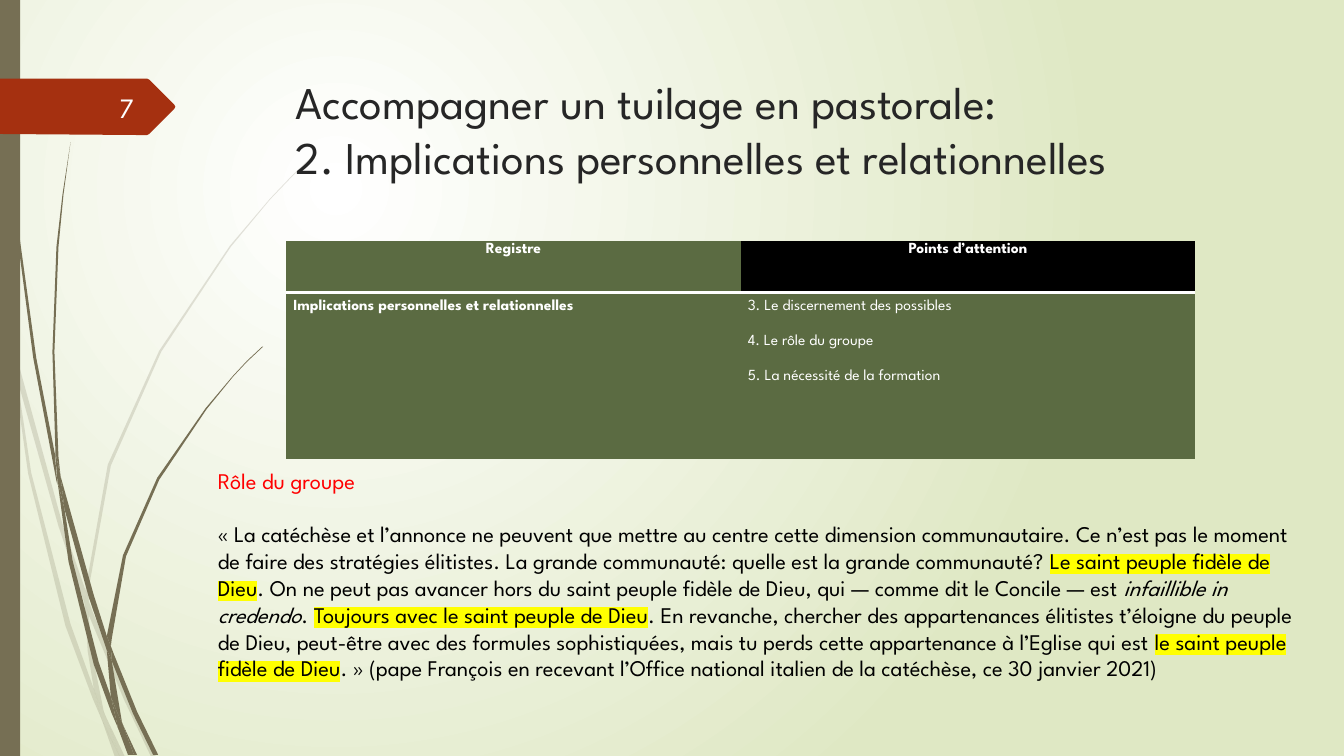
from pptx import Presentation
from pptx.dml.color import RGBColor
from pptx.enum.shapes import MSO_SHAPE
from pptx.enum.text import MSO_ANCHOR, PP_ALIGN
from pptx.oxml import parse_xml
from pptx.oxml.ns import nsdecls
from pptx.util import Pt

FONT = "League Spartan"
GRASS, RED, GREEN = "766F54", "A53010", "5B6B42"
BLACK, WHITE, YELLOW = "000000", "FFFFFF", "FFFF00"
NO_STYLE = "{2D5ABB26-0587-4C30-8999-92F81FD0307C}"

# Outlines are drawn on a fine grid; UNIT is its step in points
UNIT = 0.72
PALE = [
    [(11, 350), (9, 322), (0, 282), (0, 299), (10, 344)],
    [(58, 522), (84, 599), (85, 586), (62, 520), (14, 345), (17, 376)],
    [(92, 607), (88, 596), (88, 610), (123, 694), (150, 751), (155, 751),
     (127, 692)],
    [(119, 751), (124, 751), (105, 711)],
    [(93, 683), (70, 619), (31, 469), (17, 376), (11, 350), (28, 470),
     (65, 621), (92, 693), (101, 714), (99, 707)],
    [(84, 599), (87, 646), (93, 683), (96, 692), (105, 711), (103, 706),
     (91, 646), (88, 610), (88, 608)],
    [(88, 584), (110, 462), (160, 349), (229, 245), (268, 198), (290, 175),
     (312, 154), (312, 153), (289, 175), (268, 197), (228, 244), (158, 348),
     (107, 461), (85, 584), (85, 586), (88, 596)],
    [(101, 714), (114, 751), (119, 751)],
    [(88, 608), (88, 610), (88, 596), (85, 586), (84, 599)],
    [(96, 692), (93, 683), (99, 707), (101, 714), (119, 751), (105, 711)],
]
DARK = [
    [(7, 110), (17, 233), (33, 355), (56, 477), (57, 481), (55, 457),
     (55, 453), (36, 355), (19, 232), (8, 109), (5, 48), (4, 0), (3, 0),
     (4, 48)],
    [(88, 592), (106, 645), (106, 633), (106, 631), (93, 590), (60, 472),
     (64, 505)],
    [(113, 649), (110, 641), (111, 656), (132, 708), (152, 749), (157, 749),
     (136, 706)],
    [(110, 691), (98, 657), (72, 556), (64, 505), (57, 477), (68, 557),
     (93, 659), (111, 708), (117, 722), (116, 717)],
    [(60, 472), (58, 453), (54, 349), (58, 245), (63, 193), (70, 141),
     (62, 193), (56, 245), (52, 349), (55, 449)],
    [(133, 749), (136, 749), (122, 719)],
    [(57, 477), (64, 505), (60, 472), (55, 449), (55, 453)],
    [(111, 633), (125, 552), (158, 476), (205, 406), (231, 374), (245, 359),
     (261, 344), (260, 344), (245, 358), (231, 373), (204, 405), (156, 474),
     (122, 551), (106, 631), (110, 641)],
    [(117, 722), (127, 749), (131, 749)],
    [(106, 645), (110, 691), (116, 706), (122, 719), (121, 716), (111, 656),
     (109, 651)],
    [(106, 645), (109, 651), (111, 656), (110, 641), (106, 631), (106, 633)],
    [(116, 706), (110, 691), (116, 717), (117, 722), (130, 749), (133, 749),
     (122, 719)],
]
TAG = [(173, 108), (148, 133), (146, 134), (136, 134), (0, 133), (0, 78),
       (136, 78), (146, 78), (148, 79), (173, 104), (174, 106)]

HEADS = ["Registre", "Points d’attention"]
THEME = "Implications personnelles et relationnelles"
POINTS = ["3. Le discernement des possibles", "4. Le rôle du groupe",
          "5. La nécessité de la formation"]
MARK = {"mark": YELLOW}
QUOTE = [
    ("« La catéchèse et l’annonce ne peuvent que mettre au centre cette "
     "dimension communautaire. Ce n’est pas le moment de faire des "
     "stratégies élitistes. La grande communauté: quelle est la grande "
     "communauté? ", {}),
    ("Le saint peuple fidèle de Dieu", MARK),
    (". On ne peut pas avancer hors du saint peuple fidèle de Dieu, qui — "
     "comme dit le Concile — est ", {}),
    ("infaillible in credendo", {"italic": True}),
    (". ", {}),
    ("Toujours avec le saint peuple de Dieu", MARK),
    (". En revanche, chercher des appartenances élitistes t’éloigne du "
     "peuple de Dieu, peut-être avec des formules sophistiquées, mais tu "
     "perds cette appartenance à l’Eglise qui est ", {}),
    ("le saint peuple fidèle de Dieu", MARK),
    (". » (pape François en recevant l’Office national italien de la "
     "catéchèse, ce 30 janvier 2021)", {}),
]


def paint(fill, color):
    fill.solid()
    fill.fore_color.rgb = RGBColor.from_string(color)


def solid(color, inner=""):
    return (f'<a:solidFill {nsdecls("a")}><a:srgbClr val="{color}">{inner}'
            '</a:srgbClr></a:solidFill>')


def write(para, text, size=16, color=BLACK, bold=False, italic=False,
          mark=None, align=None, space=None, after=None):
    """Add text to a paragraph; a newline becomes a line break."""
    for i, part in enumerate(text.split("\n")):
        if i:
            para.add_line_break()
        run = para.add_run()
        run.text = part
        font = run.font
        font.size, font.bold, font.italic = Pt(size), bold, italic
        font.name = FONT
        paint(font.fill, color)
        if mark:
            props = run._r.get_or_add_rPr()
            props.find("{*}solidFill").addnext(parse_xml(
                f'<a:highlight {nsdecls("a")}><a:srgbClr val="{mark}"/>'
                '</a:highlight>'))
    if align is not None:
        para.alignment = align
    if space is not None:
        para.line_spacing = space
    if after is not None:
        para.space_after = Pt(after)


class Page:
    def __init__(self, deck):
        self.slide = deck.slides.add_slide(deck.slide_layouts[6])
        self.shapes = self.slide.shapes

    def glow(self, inner, outer):
        """Set a round gradient as the background."""
        self.slide._element.cSld.insert(0, parse_xml(
            f'<p:bg {nsdecls("p", "a")}><p:bgPr><a:gradFill><a:gsLst>'
            f'<a:gs pos="0"><a:srgbClr val="{inner}"/></a:gs>'
            f'<a:gs pos="100000"><a:srgbClr val="{outer}"/></a:gs></a:gsLst>'
            '<a:path path="circle"><a:fillToRect l="50000" t="50000" '
            'r="100000" b="100000"/></a:path></a:gradFill><a:effectLst/>'
            '</p:bgPr></p:bg>'))

    def finish(self, shape, color, alpha=None):
        shape.shadow.inherit = False
        paint(shape.fill, color)
        shape.line.fill.background()
        if alpha:
            old = shape._element.spPr.find("{*}solidFill")
            old.getparent().replace(old, parse_xml(
                solid(color, f'<a:alpha val="{alpha * 1000}"/>')))

    def bar(self, x, y, w, h, color):
        shape = self.shapes.add_shape(
            MSO_SHAPE.RECTANGLE, Pt(x), Pt(y), Pt(w), Pt(h))
        self.finish(shape, color)

    def outline(self, points, color, alpha=None):
        spots = [(Pt(x * UNIT), Pt(y * UNIT)) for x, y in points]
        form = self.shapes.build_freeform(*spots[0])
        form.add_line_segments(spots[1:], close=True)
        self.finish(form.convert_to_shape(), color, alpha)

    def box(self, x, y, w, h, anchor=MSO_ANCHOR.TOP):
        frame = self.shapes.add_textbox(Pt(x), Pt(y), Pt(w), Pt(h)).text_frame
        frame.word_wrap = True
        frame.vertical_anchor = anchor
        return frame

    def grid(self, x, y, wide, highs):
        table = self.shapes.add_table(
            len(highs), 2, Pt(x), Pt(y), Pt(wide * 2), Pt(sum(highs))).table
        table.first_row = table.horz_banding = False
        table._tbl.tblPr.find("{*}tableStyleId").text = NO_STYLE
        for col in table.columns:
            col.width = Pt(wide)
        for row, high in zip(table.rows, highs):
            row.height = Pt(high)
        return table

    def cell(self, cell, lines, color, rule=False, **look):
        cell.margin_left = cell.margin_right = Pt(5)
        cell.margin_top = cell.margin_bottom = 0
        for i, line in enumerate(lines):
            frame = cell.text_frame
            para = frame.add_paragraph() if i else frame.paragraphs[0]
            write(para, line, size=11, color=WHITE, after=10, **look)
        paint(cell.fill, color)
        if rule:
            cell._tc.get_or_add_tcPr().insert(0, parse_xml(
                f'<a:lnB {nsdecls("a")} w="{Pt(2)}">{solid(WHITE)}</a:lnB>'))


def main():
    deck = Presentation()
    deck.slide_width, deck.slide_height = Pt(960), Pt(540)
    page = Page(deck)
    page.glow(WHITE, "DFE8C4")
    for blades, alpha in [(PALE, 20), (DARK, None)]:
        for blade in blades:
            page.outline(blade, GRASS, alpha)
    page.bar(0, 0, 14.4, 540, GRASS)
    page.outline(TAG, RED)

    title = page.box(204, 49.5, 702, 101)
    write(title.paragraphs[0], "Accompagner un tuilage en pastorale:\n"
          "2. " + THEME, size=32.4, color="262626")
    number = page.box(41.8, 62, 61, 29, MSO_ANCHOR.MIDDLE)
    write(number.paragraphs[0], "7", size=20, color="FEFFFF",
          align=PP_ALIGN.RIGHT)

    table = page.grid(204.5, 172, 324.7, [37, 118.7])
    for i, (head, color) in enumerate(zip(HEADS, [GREEN, BLACK])):
        page.cell(table.cell(0, i), [head], color, rule=True, bold=True,
                  align=PP_ALIGN.CENTER, space=1.15)
    page.cell(table.cell(1, 0), [THEME], GREEN, bold=True, space=1.5)
    page.cell(table.cell(1, 1), POINTS, GREEN, space=1.5)

    body = page.box(148.5, 330, 785.5, 206)
    write(body.paragraphs[0], "Rôle du groupe", color="FF0000", after=18.8)
    quote = body.add_paragraph()
    for text, look in QUOTE:
        write(quote, text, **look)
    deck.save("out.pptx")


if __name__ == "__main__":
    main()
